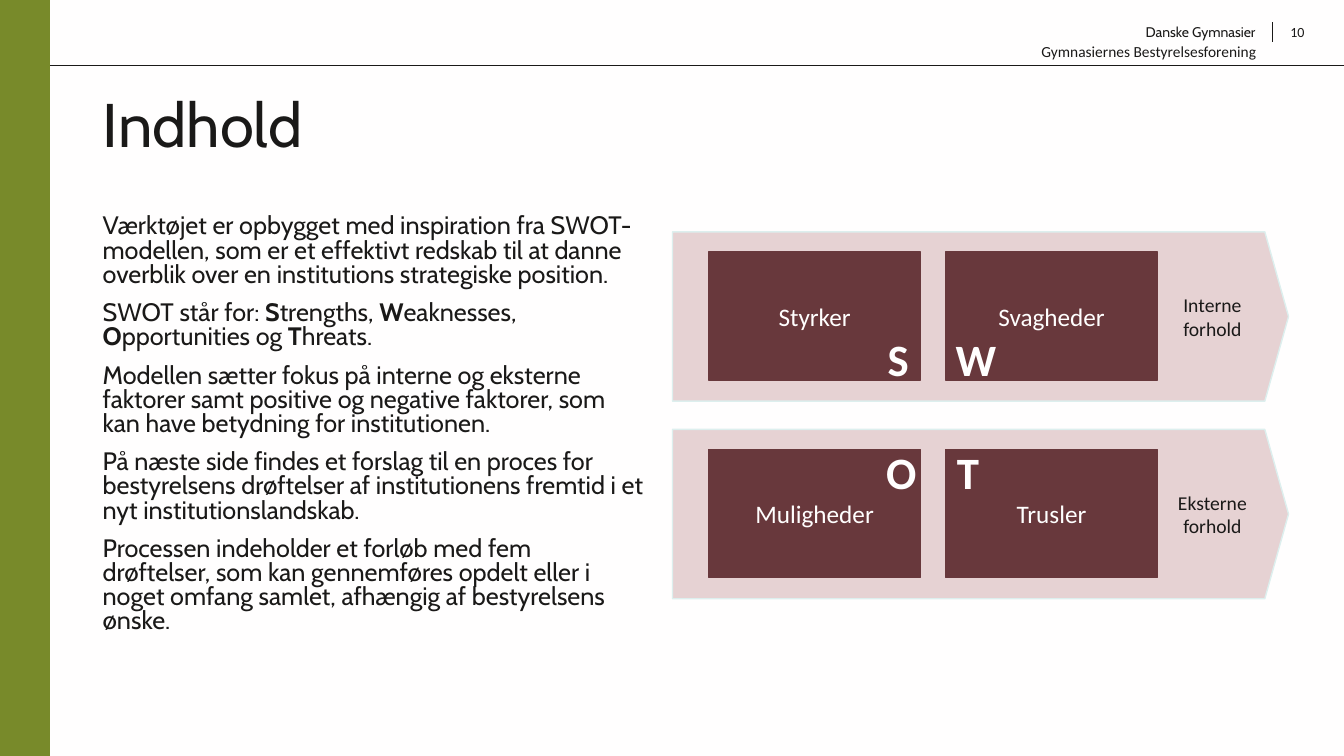
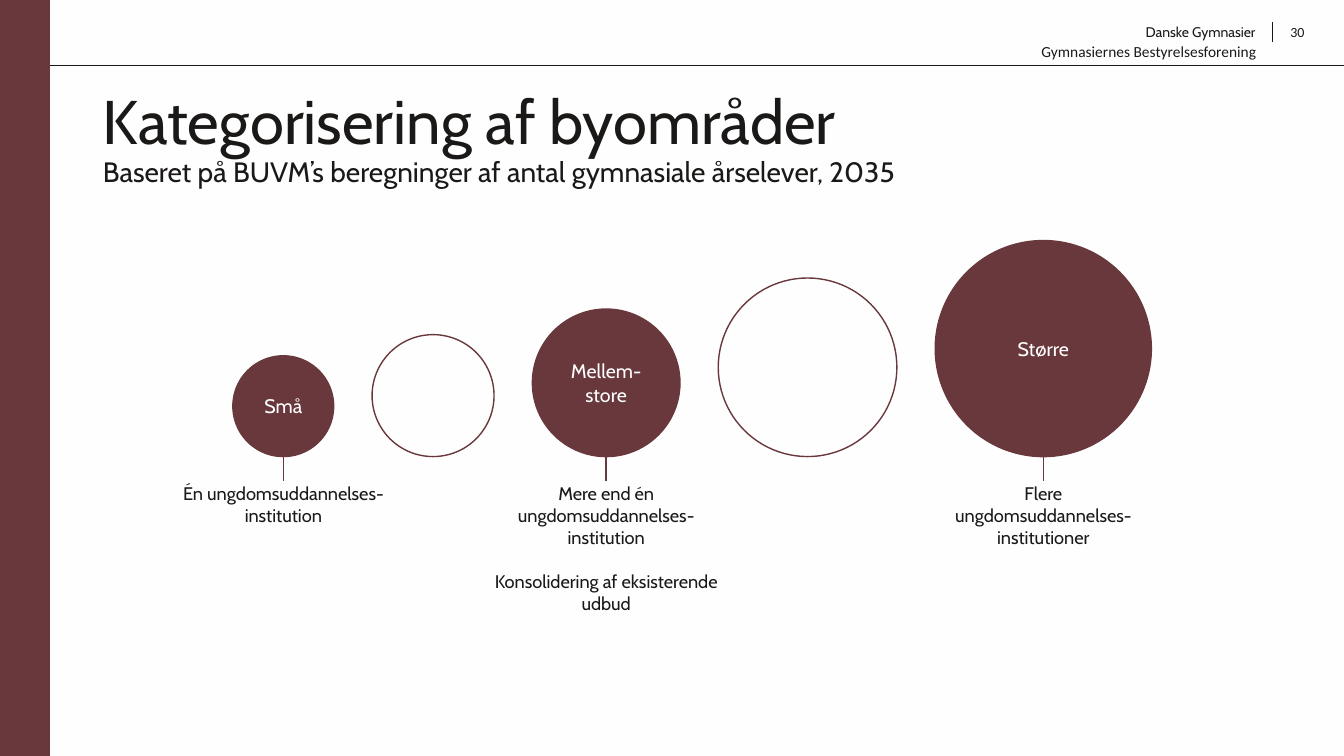
from pptx import Presentation
from pptx.dml.color import RGBColor
from pptx.enum.shapes import MSO_CONNECTOR, MSO_SHAPE
from pptx.enum.text import MSO_ANCHOR, MSO_AUTO_SIZE, PP_ALIGN
from pptx.oxml.ns import qn
from pptx.util import Inches, Pt
from lxml import etree

LEFT, CENTER, RIGHT = PP_ALIGN.LEFT, PP_ALIGN.CENTER, PP_ALIGN.RIGHT
TOP, MIDDLE = MSO_ANCHOR.TOP, MSO_ANCHOR.MIDDLE
RECTANGLE, ARROW_BAND, CIRCLE = MSO_SHAPE.RECTANGLE, MSO_SHAPE.PENTAGON, MSO_SHAPE.OVAL
STRAIGHT = MSO_CONNECTOR.STRAIGHT
NO_AUTOFIT = MSO_AUTO_SIZE.NONE

WIDTH, HEIGHT = 13.33, 7.5
INK, PAPER, GREEN, WINE, ROSE, PALE = "1A1918", "FFFEFE", "788A2A", "68383C", "E6D2D3", "DDEFEE"
CABIN, CALIBRI = "Cabin", "Calibri"
TITLE_SIZE = 44
MARGIN = 0.92
HEADER_RULE = 0.65
SIDE_BAND = 0.49

# SWOT grid
BAND_LEFT, BAND_TOP, BAND_WIDTH, BAND_HEIGHT, BAND_PITCH = 6.67, 2.3, 6.11, 1.68, 1.96
CELL_LEFT, CELL_WIDTH, CELL_HEIGHT, CELL_PITCH = 7.03, 2.1, 1.27, 2.35
CELL_INDENT = 0.2
LETTER_WIDTH, LETTER_HEIGHT = 0.44, 0.43
LABEL_LEFT, LABEL_WIDTH = 11.45, 1.15

# Row of growing circles
CIRCLE_LEFT, CIRCLE_BASE, CIRCLE_GAP, CIRCLE_GROWTH = 2.31, 4.53, 0.38, 1.21
STEM_END, CAPTION_TOP, CAPTION_HEIGHT = 4.77, 4.74, 1.45

BODY = [
    "Værktøjet er opbygget med inspiration fra SWOT-modellen, som er et effektivt redskab "
    "til at danne overblik over en institutions strategiske position.",
    "SWOT står for: **S**trengths, **W**eaknesses, **O**pportunities og **T**hreats.",
    "Modellen sætter fokus på interne og eksterne faktorer samt positive og negative "
    "faktorer, som kan have betydning for institutionen.",
    "På næste side findes et forslag til en proces for bestyrelsens drøftelser af "
    "institutionens fremtid i et nyt institutionslandskab.",
    "Processen indeholder et forløb med fem drøftelser, som kan gennemføres opdelt eller i "
    "noget omfang samlet, afhængig af bestyrelsens ønske.",
]
SWOT = [
    (["Interne", "forhold"], [("Styrker", "S"), ("Svagheder", "W")]),
    (["Eksterne", "forhold"], [("Muligheder", "O"), ("Trusler", "T")]),
]
# Circle text (None for an empty circle), caption paragraphs, caption width
CIRCLES = [
    ("Små", ["Én ungdomsuddannelses-institution"], 2.25),
    (None, None, None),
    ("Mellem-store", ["Mere end én ungdomsuddannelses-institution",
                      "Konsolidering af eksisterende udbud"], 2.43),
    (None, None, None),
    ("Større", ["Flere ungdomsuddannelses-institutioner"], 2.25),
]


def color(code):
    return RGBColor.from_string(code)


def place(left, top, width, height):
    return [Inches(value) for value in (left, top, width, height)]


def format_font(font, size, name, ink, bold=False):
    font.size, font.name, font.bold = Pt(size), name, bold
    font.color.rgb = color(ink)


def write(frame, paragraphs, size=14, font=CABIN, ink=INK, bold=False, align=LEFT,
          anchor=TOP, line_spacing=None, space_before=0, side_inset=0.1):
    """Fill a text frame; text between ** marks is bold."""
    frame.word_wrap = True
    frame.auto_size = NO_AUTOFIT
    frame.vertical_anchor = anchor
    frame.margin_left = frame.margin_right = Inches(side_inset)
    for index, text in enumerate(paragraphs):
        para = frame.add_paragraph() if index else frame.paragraphs[0]
        para.alignment = align
        para.line_spacing = line_spacing
        para.space_before = Pt(space_before if index else 0)
        for part, piece in enumerate(text.split("**")):
            span = para.add_run()
            span.text = piece
            format_font(span.font, size, font, ink, bold or part % 2 == 1)


def add_text(page, area, paragraphs, **text_format):
    box = page.shapes.add_textbox(*place(*area))
    write(box.text_frame, paragraphs, **text_format)


def add_block(page, kind, area, fill=None, line=None, text=None, **text_format):
    block = page.shapes.add_shape(kind, *place(*area))
    block.shadow.inherit = False
    if fill:
        block.fill.solid()
        block.fill.fore_color.rgb = color(fill)
    else:
        block.fill.background()
    if line:
        block.line.color.rgb = color(line)
        block.line.width = Pt(1)
    else:
        block.line.fill.background()
    if text:
        write(block.text_frame, [text], ink=PAPER, align=CENTER, anchor=MIDDLE, **text_format)
    return block


def add_line(page, start, end, ink=INK, weight=1):
    line = page.shapes.add_connector(STRAIGHT, *place(*start, *end))
    line.line.color.rgb = color(ink)
    line.line.width = Pt(weight)
    etree.SubElement(line._element.spPr, qn("a:effectLst"))


def add_page(deck, number, accent, title, title_top, subtitle=None):
    """Add a page with the shared header, side band and title."""
    page = deck.slides.add_slide(deck.slide_layouts[5])
    page.background.fill.solid()
    page.background.fill.fore_color.rgb = color(PAPER)

    heading = page.shapes.title
    heading.left, heading.top, heading.width, heading.height = place(MARGIN, title_top, 11.5, 1.45)
    write(heading.text_frame, [title], size=TITLE_SIZE, line_spacing=0.9)
    if subtitle:
        para = heading.text_frame.paragraphs[0]
        para.add_line_break()
        span = para.add_run()
        span.text = subtitle
        format_font(span.font, 20, CABIN, INK)

    add_line(page, (0, HEADER_RULE), (WIDTH, HEADER_RULE), weight=0.5)
    add_line(page, (12.62, 0.22), (12.62, 0.42), weight=0.75)
    add_text(page, (11.05, 0.18, 1.5, 0.27), ["Danske Gymnasier"], size=10, align=RIGHT)
    add_text(page, (10.23, 0.37, 2.47, 0.29), ["Gymnasiernes Bestyrelsesforening"],
             size=11, font=CALIBRI)
    add_text(page, (12.7, 0.18, 0.49, 0.4), [str(number)], size=10, font=CALIBRI)
    add_block(page, RECTANGLE, (0, 0, SIDE_BAND, HEIGHT), accent, accent)
    return page


def add_swot_cell(page, row, column, name, letter):
    """Draw a cell with its letter in the corner nearest the grid's centre."""
    left = CELL_LEFT + column * CELL_PITCH
    top = BAND_TOP + row * BAND_PITCH + CELL_INDENT
    add_block(page, RECTANGLE, (left, top, CELL_WIDTH, CELL_HEIGHT), WINE, WINE,
              name, size=18, font=CALIBRI)
    letter_left = left + (1 - column) * (CELL_WIDTH - LETTER_WIDTH)
    letter_top = top + (1 - row) * (CELL_HEIGHT - LETTER_HEIGHT)
    add_block(page, RECTANGLE, (letter_left, letter_top, LETTER_WIDTH, LETTER_HEIGHT), WINE,
              text=letter, size=32, font=CALIBRI, bold=True)


def add_swot(page):
    for row, (label, cells) in enumerate(SWOT):
        top = BAND_TOP + row * BAND_PITCH
        band = add_block(page, ARROW_BAND, (BAND_LEFT, top, BAND_WIDTH, BAND_HEIGHT), ROSE, PALE)
        band.adjustments[0] = 0.14
        add_text(page, (LABEL_LEFT, top, LABEL_WIDTH, BAND_HEIGHT), label,
                 font=CALIBRI, align=CENTER, anchor=MIDDLE)
        for column, (name, letter) in enumerate(cells):
            add_swot_cell(page, row, column, name, letter)


def add_circles(page):
    left = CIRCLE_LEFT
    for index, (name, caption, caption_width) in enumerate(CIRCLES):
        diameter = CIRCLE_GROWTH ** index
        middle = left + diameter / 2
        add_block(page, CIRCLE, (left, CIRCLE_BASE - diameter, diameter, diameter),
                  WINE if name else None, WINE, name, side_inset=0.04)
        if caption:
            add_line(page, (middle, CIRCLE_BASE), (middle, STEM_END), ink=WINE)
            add_text(page, (middle - caption_width / 2, CAPTION_TOP, caption_width, CAPTION_HEIGHT),
                     caption, size=13, align=CENTER, space_before=16)
        left += diameter + CIRCLE_GAP


def main():
    deck = Presentation()
    deck.slide_width, deck.slide_height = Inches(WIDTH), Inches(HEIGHT)

    contents = add_page(deck, 10, GREEN, "Indhold", 0.89)
    add_text(contents, (MARGIN, 2.09, 5.56, 4.76), BODY, size=18,
             line_spacing=0.8, space_before=10)
    add_swot(contents)

    areas = add_page(deck, 30, WINE, "Kategorisering af byområder", 0.86,
                     "Baseret på BUVM’s beregninger af antal gymnasiale årselever, 2035")
    add_circles(areas)

    deck.save("out.pptx")


if __name__ == "__main__":
    main()
